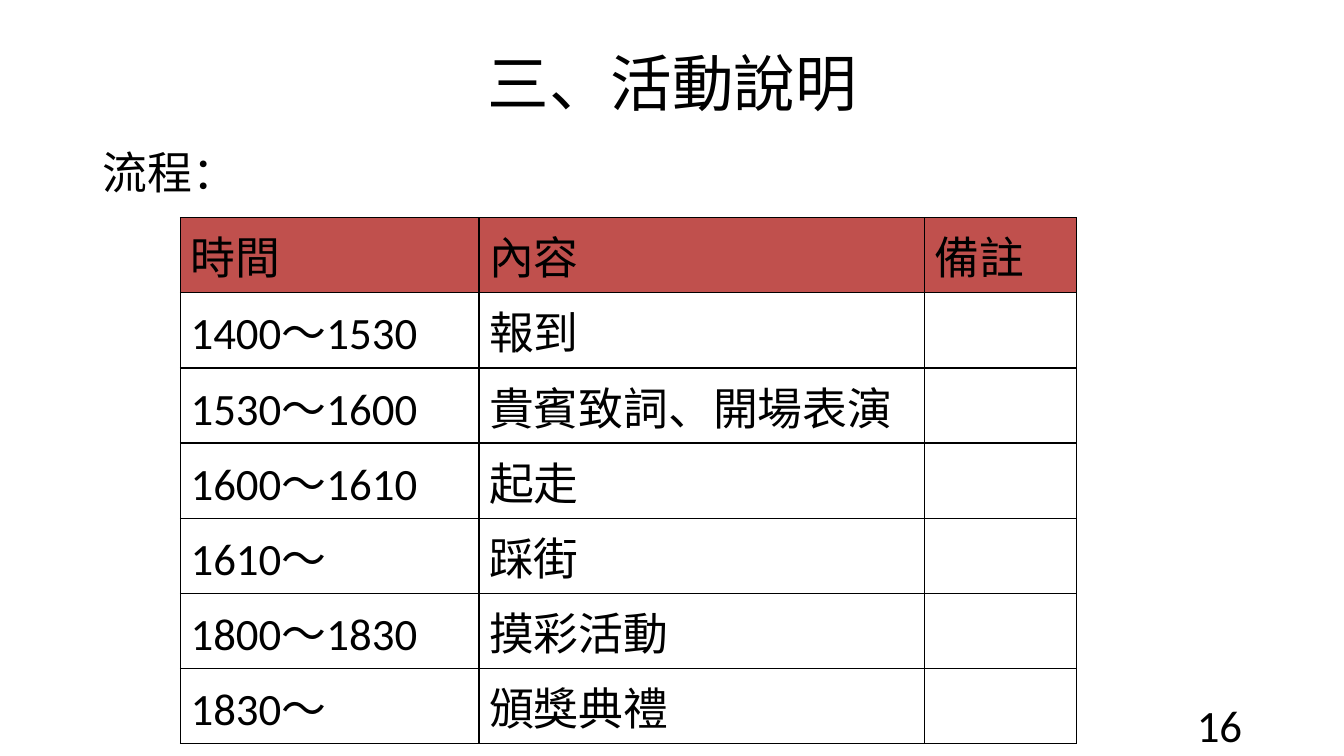
from lxml import etree
from pptx import Presentation
from pptx.dml.color import RGBColor
from pptx.enum.text import MSO_ANCHOR, MSO_AUTO_SIZE, PP_ALIGN
from pptx.oxml.ns import qn
from pptx.util import Inches, Pt

TOP = MSO_ANCHOR.TOP
LEFT, MID, RIGHT = PP_ALIGN.LEFT, PP_ALIGN.CENTER, PP_ALIGN.RIGHT
FONT = "Calibri"
COLORS = {"ink": "000000", "head": "C0504D"}

# Content
TITLE = "三、活動說明"
LEAD = "流程："
PAGE = "16"
ROWS = [
    ("時間", "內容", "備註"),
    ("1400～1530", "報到", ""),
    ("1530～1600", "貴賓致詞、開場表演", ""),
    ("1600～1610", "起走", ""),
    ("1610～", "踩街", ""),
    ("1800～1830", "摸彩活動", ""),
    ("1830～", "頒獎典禮", ""),
]
WIDTHS = (2.96, 4.42, 1.51)
ROW_H = 0.745


def write(frame, text, size=32, align=LEFT):
    para = frame.paragraphs[0]
    para.alignment = align
    run = para.add_run()
    run.text = text
    run.font.name = FONT
    run.font.size = Pt(size)
    run.font.color.rgb = RGBColor.from_string(COLORS["ink"])
    return para


def place(shape, left, top, width, height):
    shape.left, shape.top = Inches(left), Inches(top)
    shape.width, shape.height = Inches(width), Inches(height)
    frame = shape.text_frame
    frame.word_wrap = True
    frame.auto_size = MSO_AUTO_SIZE.NONE
    frame.vertical_anchor = TOP
    return frame


def border(cell):
    props = cell._tc.get_or_add_tcPr()
    for side in ("lnL", "lnR", "lnT", "lnB"):
        line = etree.SubElement(props, qn("a:" + side), w=str(Pt(1)))
        fill = etree.SubElement(line, qn("a:solidFill"))
        etree.SubElement(fill, qn("a:srgbClr"), val=COLORS["ink"])


deck = Presentation()
deck.slide_width, deck.slide_height = Inches(13.33), Inches(7.5)
slide = deck.slides.add_slide(deck.slide_layouts[1])

# Title and lead line
write(place(slide.shapes.title, 0.92, 0.4, 11.5, 1.45), TITLE, 44, MID)
lead = write(place(slide.placeholders[1], 0.92, 1.39, 11.5, 4.76), LEAD)
lead.space_before = Pt(0)
props = lead._p.get_or_add_pPr()
props.set("marL", "0")
props.set("indent", "0")
etree.SubElement(props, qn("a:buNone"))

# Page number
number = slide.shapes.add_textbox(0, 0, 0, 0)
write(place(number, 9.42, 6.87, 3, 0.4), PAGE, align=RIGHT)

# Schedule table
table = slide.shapes.add_table(
    len(ROWS), len(WIDTHS), Inches(1.79), Inches(2.16),
    Inches(sum(WIDTHS)), Inches(ROW_H * len(ROWS))).table
table.first_row = table.horz_banding = False
for col, width in zip(table.columns, WIDTHS):
    col.width = Inches(width)
for r, row in enumerate(ROWS):
    table.rows[r].height = Inches(ROW_H)
    for c, text in enumerate(row):
        cell = table.cell(r, c)
        border(cell)
        if r == 0:
            cell.fill.solid()
            cell.fill.fore_color.rgb = RGBColor.from_string(COLORS["head"])
        else:
            cell.fill.background()
        if text:
            write(cell.text_frame, text)

deck.save("out.pptx")
